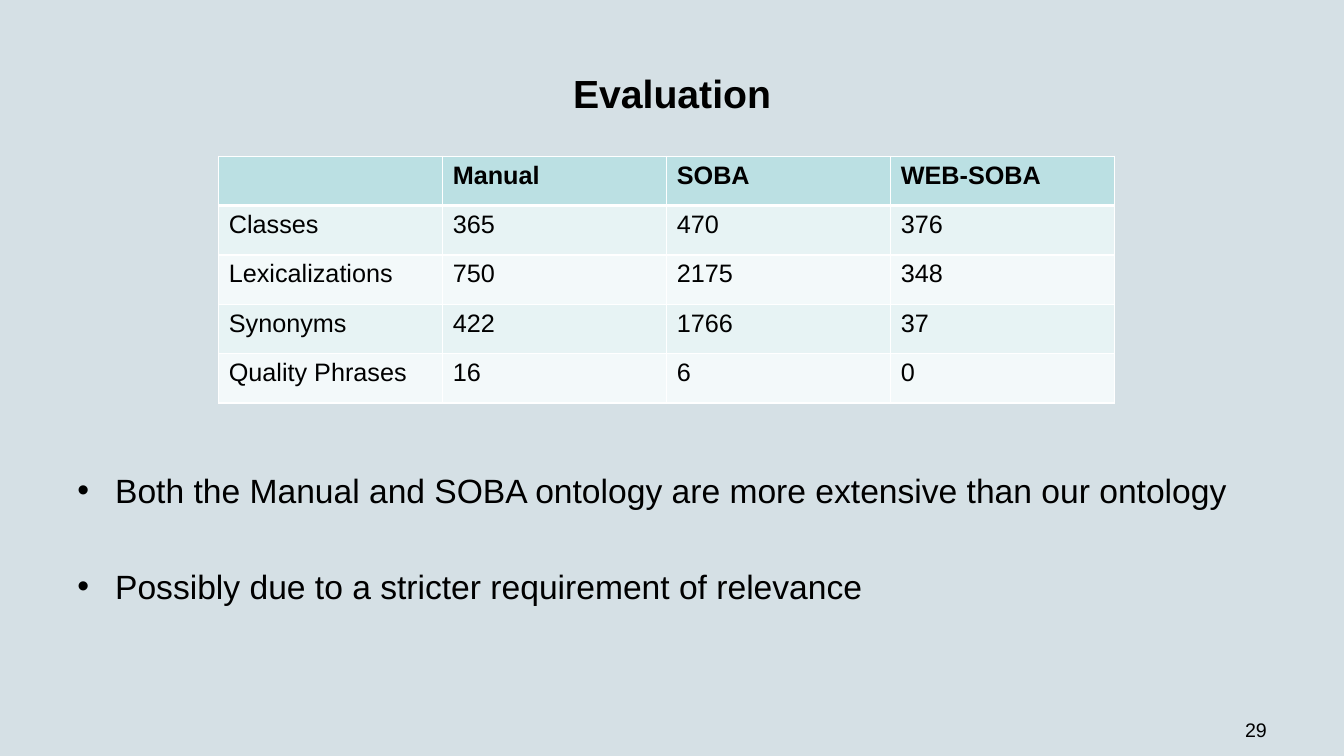
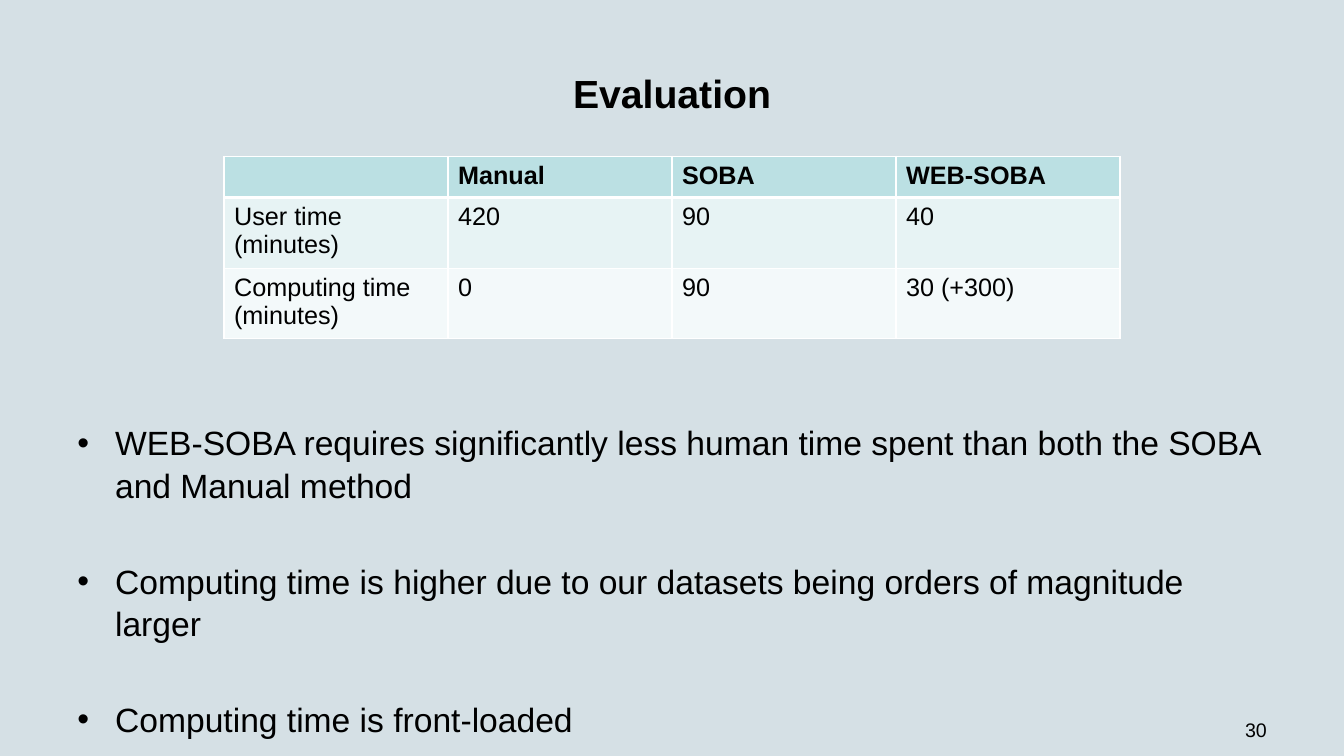
import pptx
import pptx.util
import pptx.dml.color
import pptx.enum.text
import pptx.oxml.ns
import lxml.etree
from dataclasses import dataclass

Inches, Pt = pptx.util.Inches, pptx.util.Pt
RGB = pptx.dml.color.RGBColor.from_string
qn = pptx.oxml.ns.qn


@dataclass(frozen=True)
class Theme:
    font: str = "Arial"
    text: str = "000000"
    background: str = "D5E0E5"
    header: str = "BBE0E3"
    bands: tuple = ("E7F3F4", "F3F9FA")
    border: str = "FFFFFF"
    title_size: int = 28
    body_size: int = 24
    table_size: int = 18
    number_size: int = 14


theme = Theme()
WIDTH, HEIGHT = 13.33, 7.5
MARGIN = WIDTH / 20
CONTENT = WIDTH - 2 * MARGIN
COLUMN = WIDTH / 6
TABLE_TOP = 1.55
FIRST_NUMBER = 29
METHODS = ["", "Manual", "SOBA", "WEB-SOBA"]

# table_left, row_height and body_top are in inches
SLIDES = [
    dict(
        table_left=2.17, row_height=0.49, body_top=4.59,
        rows=[
            METHODS,
            ["Classes", "365", "470", "376"],
            ["Lexicalizations", "750", "2175", "348"],
            ["Synonyms", "422", "1766", "37"],
            ["Quality Phrases", "16", "6", "0"],
        ],
        bullets=[
            "Both the Manual and SOBA ontology are more extensive than our ontology",
            "Possibly due to a stricter requirement of relevance",
        ],
    ),
    dict(
        table_left=COLUMN, row_height=0.41, body_top=4.12,
        rows=[
            METHODS,
            ["User time (minutes)", "420", "90", "40"],
            ["Computing time (minutes)", "0", "90", "30 (+300)"],
        ],
        bullets=[
            "WEB-SOBA requires significantly less human time spent than both the SOBA and Manual method",
            "Computing time is higher due to our datasets being orders of magnitude larger",
            "Computing time is front-loaded",
        ],
    ),
]


def add_run(p, text, size, bold=False):
    r = p.add_run()
    r.text = text
    r.font.name = theme.font
    r.font.size = Pt(size)
    r.font.bold = bold
    r.font.color.rgb = RGB(theme.text)


def place(sp, left, top, width, height):
    sp.left, sp.top = Inches(left), Inches(top)
    sp.width, sp.height = Inches(width), Inches(height)


prs = pptx.Presentation()
prs.slide_width, prs.slide_height = Inches(WIDTH), Inches(HEIGHT)
fill = prs.slide_master.background.fill
fill.solid()
fill.fore_color.rgb = RGB(theme.background)

for number, content in enumerate(SLIDES, FIRST_NUMBER):
    slide = prs.slides.add_slide(prs.slide_layouts.get_by_name("Title and Content"))

    title = slide.shapes.title
    place(title, MARGIN, HEIGHT * 0.04, CONTENT, HEIGHT / 6)
    p = title.text_frame.paragraphs[0]
    p.alignment = pptx.enum.text.PP_ALIGN.CENTER
    add_run(p, "Evaluation", theme.title_size, bold=True)

    body = slide.placeholders[1]
    place(body, MARGIN, content["body_top"], CONTENT, HEIGHT * 0.98 - content["body_top"])
    tf = body.text_frame
    tf.auto_size = pptx.enum.text.MSO_AUTO_SIZE.NONE
    for i, text in enumerate(content["bullets"]):
        p = tf.add_paragraph() if i else tf.paragraphs[0]
        p.line_spacing = 1.05
        p.space_before, p.space_after = Pt(0), Pt(38.4)
        add_run(p, text, theme.body_size)

    box = slide.shapes.add_textbox(0, 0, 0, 0)
    place(box, WIDTH * 0.95 - 3.11, 7.07, 3.11, 0.32)
    box.text_frame.word_wrap = True
    p = box.text_frame.paragraphs[0]
    p.alignment = pptx.enum.text.PP_ALIGN.RIGHT
    add_run(p, str(number), theme.number_size)

    rows = content["rows"]
    table = slide.shapes.add_table(
        len(rows), len(METHODS), Inches(content["table_left"]), Inches(TABLE_TOP),
        Inches(COLUMN * len(METHODS)), Inches(content["row_height"] * len(rows)),
    ).table
    for i, row in enumerate(rows):
        for j, text in enumerate(row):
            cell = table.cell(i, j)
            tcPr = cell._tc.get_or_add_tcPr()
            for side in ("L", "R", "T", "B"):
                under_header = (i, side) in ((0, "B"), (1, "T"))
                ln = lxml.etree.SubElement(tcPr, qn(f"a:ln{side}"), w=str(Pt(3 if under_header else 1)))
                solid = lxml.etree.SubElement(ln, qn("a:solidFill"))
                lxml.etree.SubElement(solid, qn("a:srgbClr"), val=theme.border)
            cell.fill.solid()
            cell.fill.fore_color.rgb = RGB(theme.bands[(i - 1) % 2] if i else theme.header)
            if text:
                add_run(cell.text_frame.paragraphs[0], text, theme.table_size, bold=i == 0)

prs.save("out.pptx")
